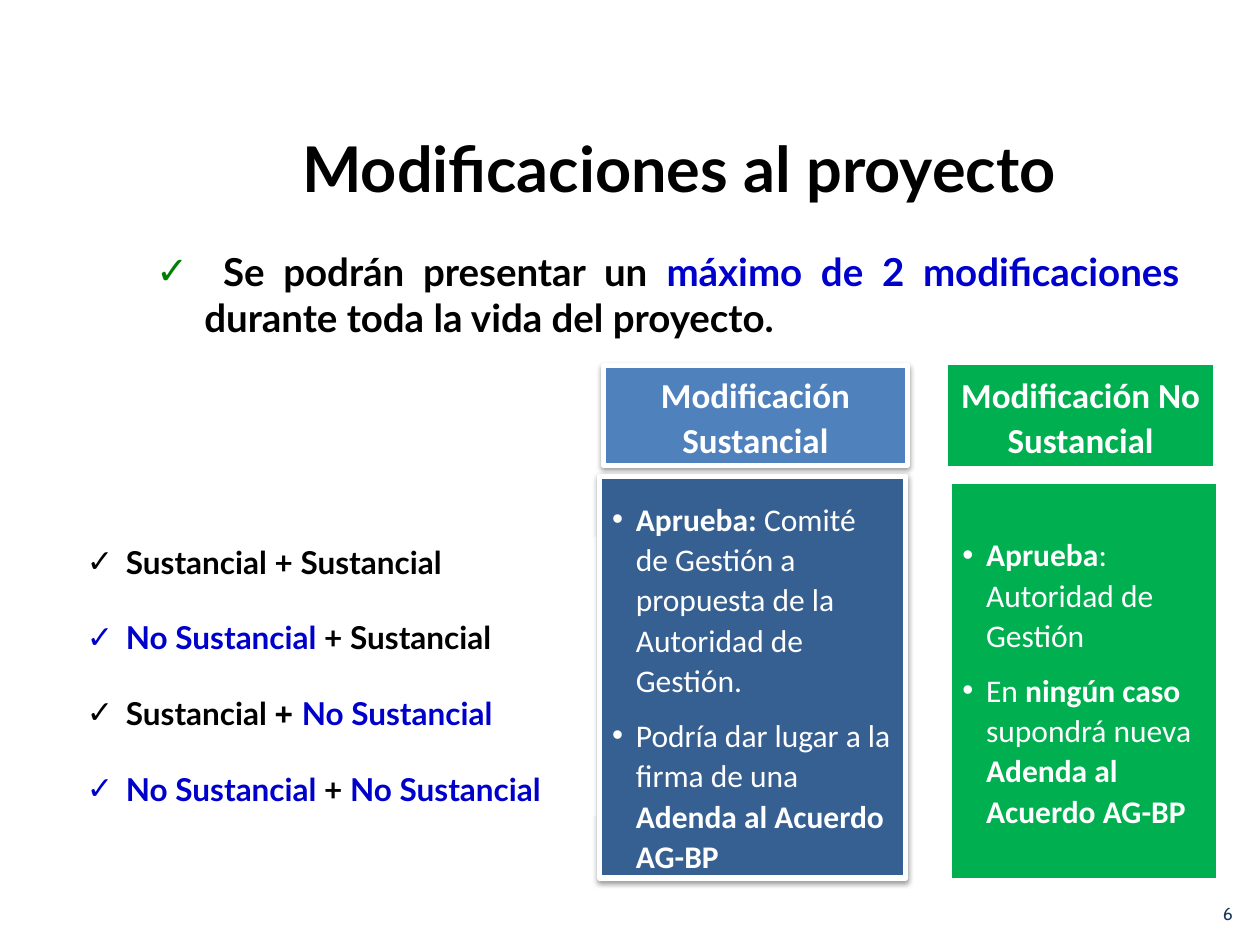
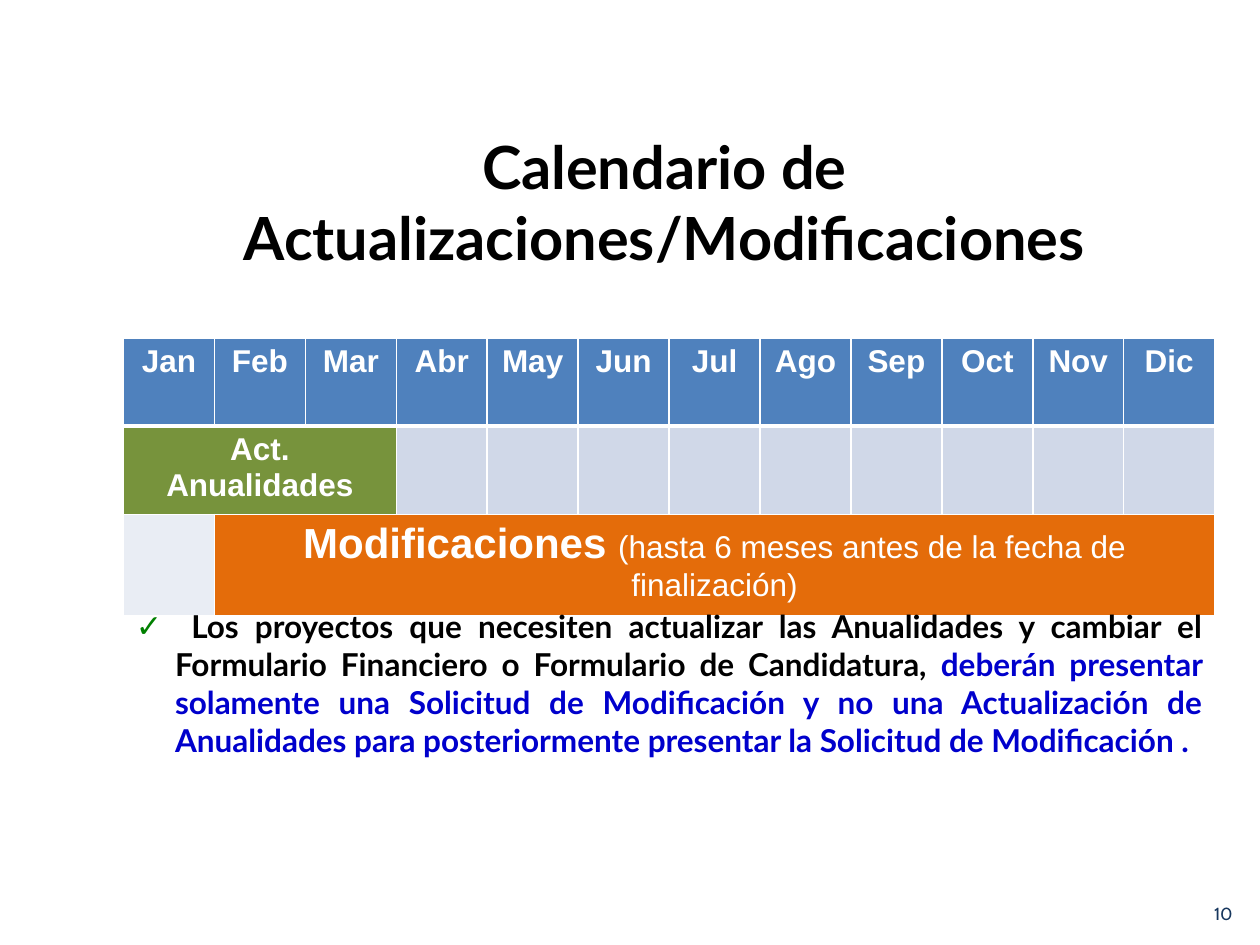
from dataclasses import dataclass, field
from typing import Optional

from lxml import etree
from pptx import Presentation
from pptx.dml.color import RGBColor
from pptx.enum.shapes import MSO_SHAPE
from pptx.enum.text import MSO_ANCHOR, PP_ALIGN
from pptx.oxml.ns import qn
from pptx.util import Cm, Pt

RECT = MSO_SHAPE.RECTANGLE
TOP, MIDDLE = MSO_ANCHOR.TOP, MSO_ANCHOR.MIDDLE
LEFT, CENTER, RIGHT, JUSTIFY = PP_ALIGN.LEFT, PP_ALIGN.CENTER, PP_ALIGN.RIGHT, PP_ALIGN.JUSTIFY

WHITE, BLACK = "FFFFFF", "000000"
BLUE, DARK_BLUE, NAVY, ACCENT = "4F81BD", "376092", "17375E", "0000CC"
GREEN, CHECK_GREEN, OLIVE, ORANGE = "00B050", "008000", "77933C", "E46C0A"
BAND_1, BAND_2 = "D0D8E8", "E9EDF4"

CARD_SPACING = {"line_spacing": 1.07, "space_after": Pt(8)}
MONTHS = "Jan Feb Mar Abr May Jun Jul Ago Sep Oct Nov Dic".split()


@dataclass
class Style:
    size: float
    font: str = "Lato"
    color: str = BLACK
    bold: bool = True


@dataclass
class Run:
    text: str
    color: Optional[str] = None
    bold: Optional[bool] = None
    size: Optional[float] = None
    font: Optional[str] = None


@dataclass
class Bullet:
    char: str
    margin: float
    hanging: float
    color: Optional[str] = None


@dataclass
class Para:
    runs: list[Run]
    align: PP_ALIGN = LEFT
    bullet: Optional[Bullet] = None
    spacing: dict = field(default_factory=dict)


@dataclass
class Box:
    left: float
    top: float
    width: float
    height: float

    def lengths(self) -> list[int]:
        return [Cm(v) for v in (self.left, self.top, self.width, self.height)]


@dataclass
class Card:
    box: Box
    fill: str
    border: float
    style: Style
    paras: list[Para]
    shadow: bool = False
    anchor: MSO_ANCHOR = MIDDLE
    inset_top: float = 0.13


DOT = Bullet("•", 0.48, 0.48)
CHECK = Bullet("✓", 0.79, 0.79)
GREEN_CHECK = Bullet("✓", 0.79, 0.79, CHECK_GREEN)
DEEP_CHECK = Bullet("✓", 2.24, 0.97, CHECK_GREEN)
HEADING = Style(20, "Calibri", WHITE)
CARD_TEXT = Style(18, "Calibri", WHITE, False)
CELL_TEXT = Style(18, "Arial", WHITE)


def rgb(color: str) -> RGBColor:
    return RGBColor.from_string(color)


def add_xml(parent, tag: str, **attrs):
    return etree.SubElement(parent, qn(tag), {k: str(v) for k, v in attrs.items()})


def add_bullet(p, bullet: Bullet) -> None:
    pPr = p._p.get_or_add_pPr()
    pPr.set("marL", str(Cm(bullet.margin)))
    pPr.set("indent", str(-Cm(bullet.hanging)))
    if bullet.color:
        add_xml(add_xml(pPr, "a:buClr"), "a:srgbClr", val=bullet.color)
    add_xml(pPr, "a:buFont", typeface="Arial")
    add_xml(pPr, "a:buChar", char=bullet.char)


def write(tf, paras: list[Para], style: Style) -> None:
    """Fill a text frame; runs override the given style where they set a value."""
    for i, para in enumerate(paras):
        p = tf.add_paragraph() if i else tf.paragraphs[0]
        if para.bullet:
            add_bullet(p, para.bullet)
        for name, value in {"alignment": para.align, **para.spacing}.items():
            setattr(p, name, value)
        for run in para.runs:
            r = p.add_run()
            r.text = run.text
            bold = style.bold if run.bold is None else run.bold
            formats = {"name": run.font or style.font, "size": Pt(run.size or style.size),
                       "bold": bold}
            for name, value in formats.items():
                setattr(r.font, name, value)
            r.font.color.rgb = rgb(run.color or style.color)


def add_text(s, box: Box, paras: list[Para], style: Style, anchor: MSO_ANCHOR = TOP) -> None:
    tf = s.shapes.add_textbox(*box.lengths()).text_frame
    tf.word_wrap = True
    tf.vertical_anchor = anchor
    write(tf, paras, style)


def add_rect(s, box: Box, fill: str):
    sp = s.shapes.add_shape(RECT, *box.lengths())
    sp.shadow.inherit = False
    sp.fill.solid()
    sp.fill.fore_color.rgb = rgb(fill)
    sp.line.fill.background()
    sp.text_frame.word_wrap = True
    return sp


def add_drop_shadow(sp) -> None:
    effects = sp._element.spPr.find(qn("a:effectLst"))
    shadow = add_xml(effects, "a:outerShdw", blurRad=Pt(3.1), dist=Pt(1.6), dir=5400000,
                     rotWithShape=0)
    add_xml(add_xml(shadow, "a:srgbClr", val=BLACK), "a:alpha", val=38000)


def add_card(s, card: Card) -> None:
    sp = add_rect(s, card.box, card.fill)
    sp.line.color.rgb = rgb(WHITE)
    sp.line.width = Pt(card.border)
    if card.shadow:
        add_drop_shadow(sp)
    tf = sp.text_frame
    tf.vertical_anchor = card.anchor
    tf.margin_top = Cm(card.inset_top)
    write(tf, card.paras, card.style)


def add_slide(prs, title: str, title_box: Box, title_size: float, number: int):
    s = prs.slides.add_slide(prs.slide_layouts[6])
    add_text(s, Box(19.18, 17.91, 5.92, 1.02), [Para([Run(str(number))], RIGHT)],
             Style(10, "Cabin", NAVY, False), MIDDLE)
    add_text(s, title_box, [Para([Run(title)], CENTER)], Style(title_size))
    return s


def style_cell(cell, fill: str, bottom: float = 1) -> None:
    tcPr = cell._tc.get_or_add_tcPr()
    for side, width in {"L": 1, "R": 1, "T": 1, "B": bottom}.items():
        ln = add_xml(tcPr, f"a:ln{side}", w=Pt(width))
        add_xml(add_xml(ln, "a:solidFill"), "a:srgbClr", val=WHITE)
    cell.fill.solid()
    cell.fill.fore_color.rgb = rgb(fill)


def add_calendar(s, box: Box, row_heights: list[float]) -> None:
    table = s.shapes.add_table(3, len(MONTHS), *box.lengths()).table
    table.first_row = table.horz_banding = False
    for column in table.columns:
        column.width = Cm(box.width / len(MONTHS))
    for row, height in zip(table.rows, row_heights):
        row.height = Cm(height)

    for col, month in enumerate(MONTHS):
        style_cell(table.cell(0, col), BLUE, bottom=3)
        style_cell(table.cell(1, col), OLIVE if col < 3 else BAND_1)
        style_cell(table.cell(2, col), ORANGE if col else BAND_2)
        write(table.cell(0, col).text_frame, [Para([Run(month)], CENTER)], CELL_TEXT)

    periods = [
        (1, 0, 2, [Run("Act. Anualidades")]),
        (2, 1, 11, [Run("Modificaciones ", size=24),
                    Run("(hasta 6 meses antes de la fecha de finalización)", bold=False)]),
    ]
    for row, first, last, runs in periods:
        cell = table.cell(row, first)
        cell.merge(table.cell(row, last))
        write(cell.text_frame, [Para(runs, CENTER)], CELL_TEXT)


def add_combinations(s, box: Box) -> None:
    """List the allowed pairs of modifications on a translucent panel."""
    sp = add_rect(s, box, WHITE)
    color = sp._element.spPr.find(qn("a:solidFill")).find(qn("a:srgbClr"))
    add_xml(color, "a:alpha", val=54000)
    yes, no = Run("Sustancial"), Run("No Sustancial", ACCENT)
    paras = []
    for first, second, plus_font in [(yes, yes, None), (no, yes, None),
                                     (yes, no, "Arial"), (no, no, None)]:
        runs = [Run(first.text + " ", first.color), Run("+ ", font=plus_font), second]
        spacing = {"space_before": Pt(21.6)} if paras else {}
        paras.append(Para(runs, bullet=CHECK, spacing=spacing))
    sp.text_frame.vertical_anchor = TOP
    write(sp.text_frame, paras, Style(18))


def heading(text: str) -> list[Para]:
    return [Para([Run(text)], CENTER, spacing=CARD_SPACING)]


def points(*items: list[Run]) -> list[Para]:
    return [Para(runs, bullet=DOT, spacing=CARD_SPACING) for runs in items]


def add_modifications_slide(prs) -> None:
    s = add_slide(prs, "Modificaciones al proyecto", Box(4.29, 2.49, 18.8, 1.8), 36, 6)
    addendum = Run("Adenda al Acuerdo AG-BP", bold=True)
    cards = [
        Card(Box(12.17, 7.37, 6.12, 2.01), BLUE, 3, HEADING,
             heading("Modificación Sustancial"), shadow=True),
        Card(Box(19.08, 7.32, 5.41, 2.11), GREEN, 2, HEADING,
             heading("Modificación No Sustancial")),
        Card(Box(12.09, 9.6, 6.17, 8.1), DARK_BLUE, 3, CARD_TEXT, points(
            [Run("Aprueba: ", bold=True),
             Run("Comité de Gestión a propuesta de la Autoridad de Gestión.")],
            [Run("Podría dar lugar a la firma de una "), addendum],
        ), shadow=True, anchor=TOP, inset_top=0.42),
        Card(Box(19.15, 9.73, 5.41, 8), GREEN, 2, CARD_TEXT, points(
            [Run("Aprueba", bold=True), Run(": Autoridad de Gestión")],
            [Run("En "), Run("ningún caso ", bold=True), Run("supondrá nueva "), addendum],
        )),
    ]
    for card in cards:
        add_card(s, card)
    add_text(s, Box(1.63, 4.88, 22.4, 2.13), [Para([
        Run(" Se podrán presentar un "),
        Run("máximo de 2 modificaciones", ACCENT),
        Run(" durante toda la vida del proyecto."),
    ], JUSTIFY, DEEP_CHECK)], Style(22))
    add_combinations(s, Box(1.5, 10.82, 10.52, 5.64))


def add_calendar_slide(prs) -> None:
    s = add_slide(prs, "Calendario de Actualizaciones/Modificaciones",
                  Box(1.7, 2.49, 23.39, 3.18), 34, 10)
    add_calendar(s, Box(2.49, 6.81, 22, 5.59), [1.78, 1.78, 2.03])
    add_text(s, Box(2.49, 12.12, 22, 4.11), [Para([
        Run(" Los proyectos que necesiten actualizar las Anualidades y cambiar el "
            "Formulario Financiero o Formulario de Candidatura, "),
        Run("deberán presentar solamente una Solicitud de Modificación y no una "
            "Actualización de Anualidades para posteriormente presentar la Solicitud "
            "de Modificación .", ACCENT),
    ], JUSTIFY, GREEN_CHECK)], Style(18))


def main() -> None:
    prs = Presentation()
    prs.slide_width, prs.slide_height = Cm(25.4), Cm(19.05)
    add_modifications_slide(prs)
    add_calendar_slide(prs)
    prs.save("out.pptx")


if __name__ == "__main__":
    main()
